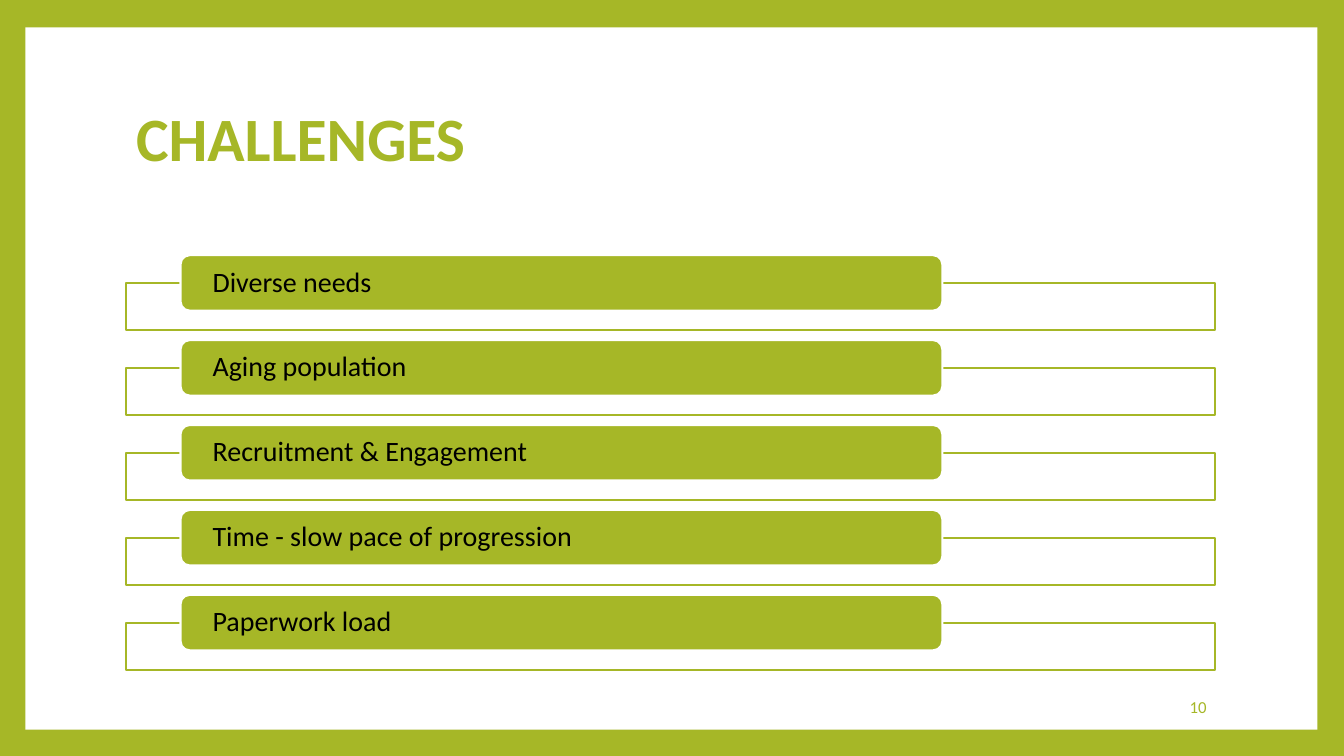
from lxml.etree import SubElement
from pptx import Presentation
from pptx.dml.color import RGBColor
from pptx.enum.shapes import MSO_SHAPE
from pptx.enum.text import MSO_ANCHOR, PP_ALIGN
from pptx.oxml.ns import qn
from pptx.util import Cm, Pt

TITLE = "CHALLENGES"
PAGE_NUMBER = "10"
CHALLENGES = [
    "Diverse needs",
    "Aging population",
    "Recruitment & Engagement",
    "Time - slow pace of progression",
    "Paperwork load",
]

GREEN = RGBColor(0xA6, 0xB7, 0x27)
WHITE = RGBColor(0xFF, 0xFF, 0xFF)
BLACK = RGBColor(0x00, 0x00, 0x00)
FONT = "Calibri"

LEFT, WIDTH = 3.18, 27.43
PILL_LEFT, PILL_WIDTH, PILL_HEIGHT = 4.55, 19.2, 1.4
FIRST_PILL_TOP, PITCH = 6.43, 2.14
FRAME_HEIGHT = 1.19


def add_block(page, kind, left, top, width, height, fill, line=None):
    block = page.shapes.add_shape(kind, Cm(left), Cm(top), Cm(width), Cm(height))
    block.shadow.inherit = False
    block.fill.solid()
    block.fill.fore_color.rgb = fill
    if line is None:
        block.line.fill.background()
    else:
        block.line.color.rgb = line
        block.line.width = Pt(1.5)
    return block


def write(box, text, size, color, bold=False, align=PP_ALIGN.LEFT):
    frame = box.text_frame
    frame.word_wrap = True
    frame.vertical_anchor = MSO_ANCHOR.MIDDLE
    para = frame.paragraphs[0]
    para.alignment = align
    span = para.add_run()
    span.text = text
    span.font.name = FONT
    span.font.size = Pt(size)
    span.font.bold = bold
    span.font.color.rgb = color
    return para


def add_challenge(page, index, text):
    top = FIRST_PILL_TOP + index * PITCH
    frame = add_block(page, MSO_SHAPE.RECTANGLE, LEFT, top + PILL_HEIGHT / 2,
                      WIDTH, FRAME_HEIGHT, WHITE, GREEN)
    color = frame.fill._xPr.find(qn("a:solidFill"))[0]
    SubElement(color, qn("a:alpha"), val="90000")

    pill = add_block(page, MSO_SHAPE.ROUNDED_RECTANGLE, PILL_LEFT, top,
                     PILL_WIDTH, PILL_HEIGHT, GREEN, WHITE)
    pill.text_frame.margin_left = pill.text_frame.margin_right = Cm(0.74)
    pill.text_frame.margin_top = pill.text_frame.margin_bottom = 0
    write(pill, text, 20, BLACK).line_spacing = 0.9


def main():
    deck = Presentation()
    deck.slide_width, deck.slide_height = Cm(33.87), Cm(19.05)
    page = deck.slides.add_slide(deck.slide_layouts[6])
    page.background.fill.solid()
    page.background.fill.fore_color.rgb = GREEN
    add_block(page, MSO_SHAPE.RECTANGLE, 0.64, 0.69, 32.56, 17.7, WHITE)

    title = page.shapes.add_textbox(Cm(LEFT), Cm(1.7), Cm(WIDTH), Cm(3.76))
    write(title, TITLE, 44, GREEN, bold=True).line_spacing = 0.9

    number = page.shapes.add_textbox(Cm(25.91), Cm(17.3), Cm(4.75), Cm(1.02))
    write(number, PAGE_NUMBER, 12, GREEN, align=PP_ALIGN.RIGHT)

    for index, text in enumerate(CHALLENGES):
        add_challenge(page, index, text)

    deck.save("out.pptx")


if __name__ == "__main__":
    main()
